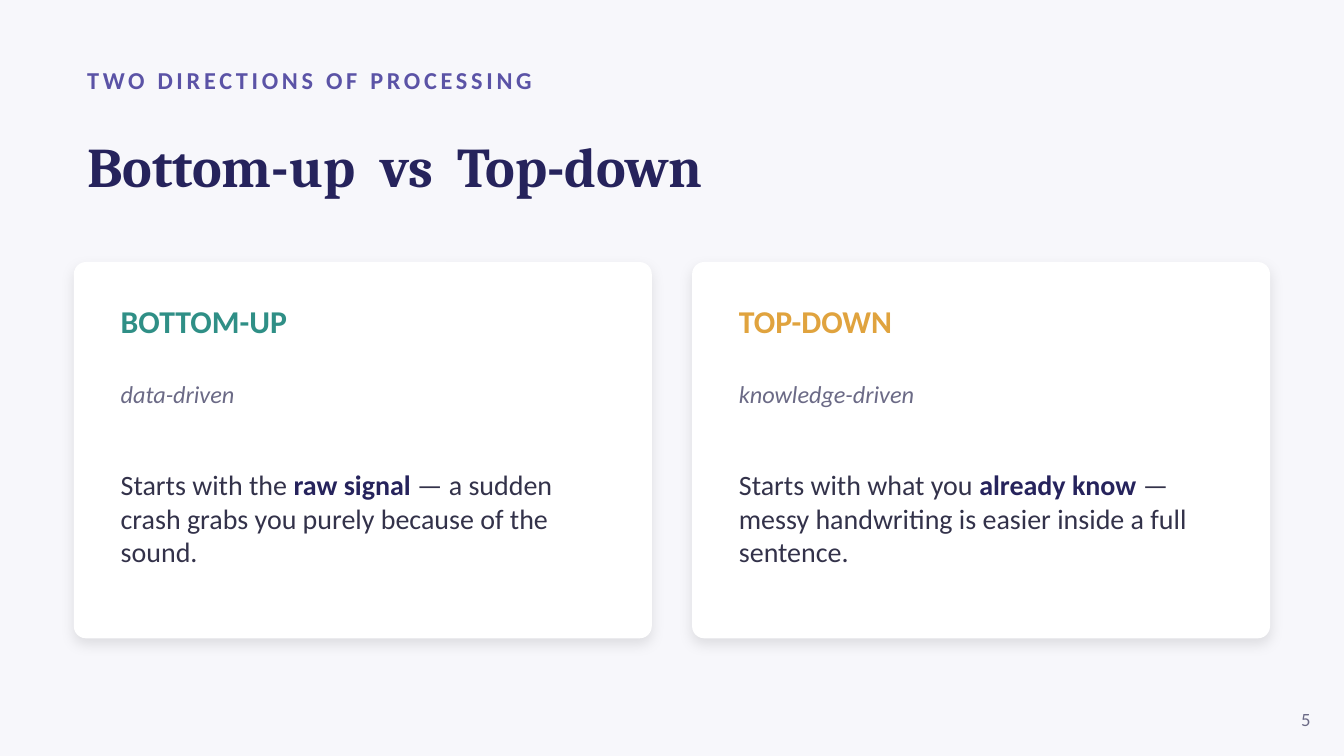
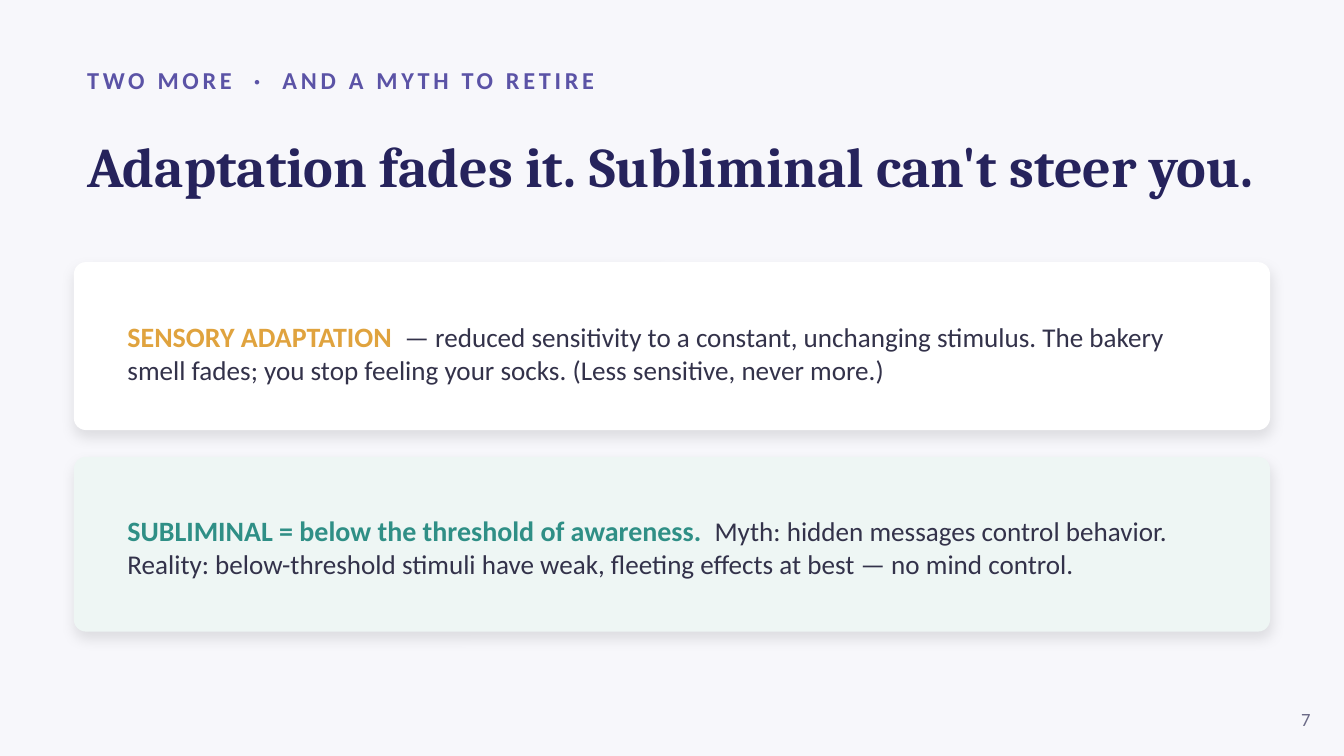
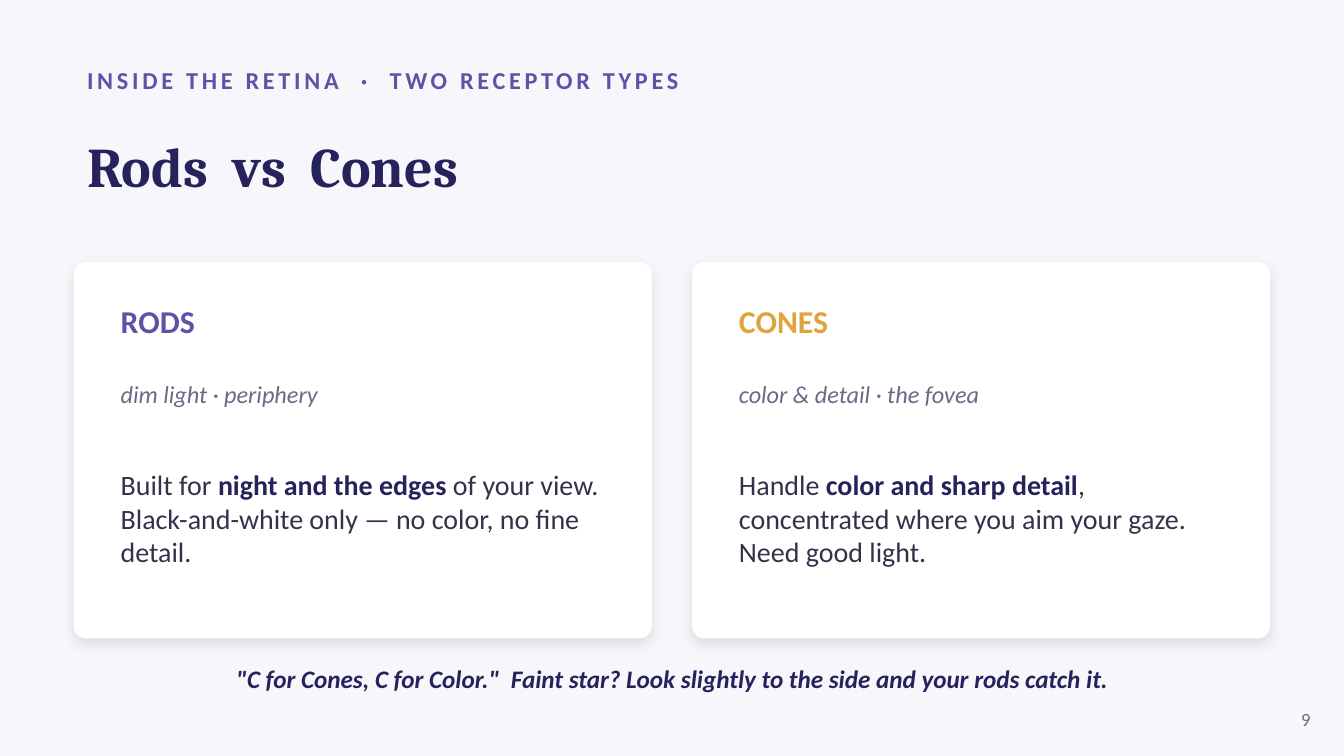
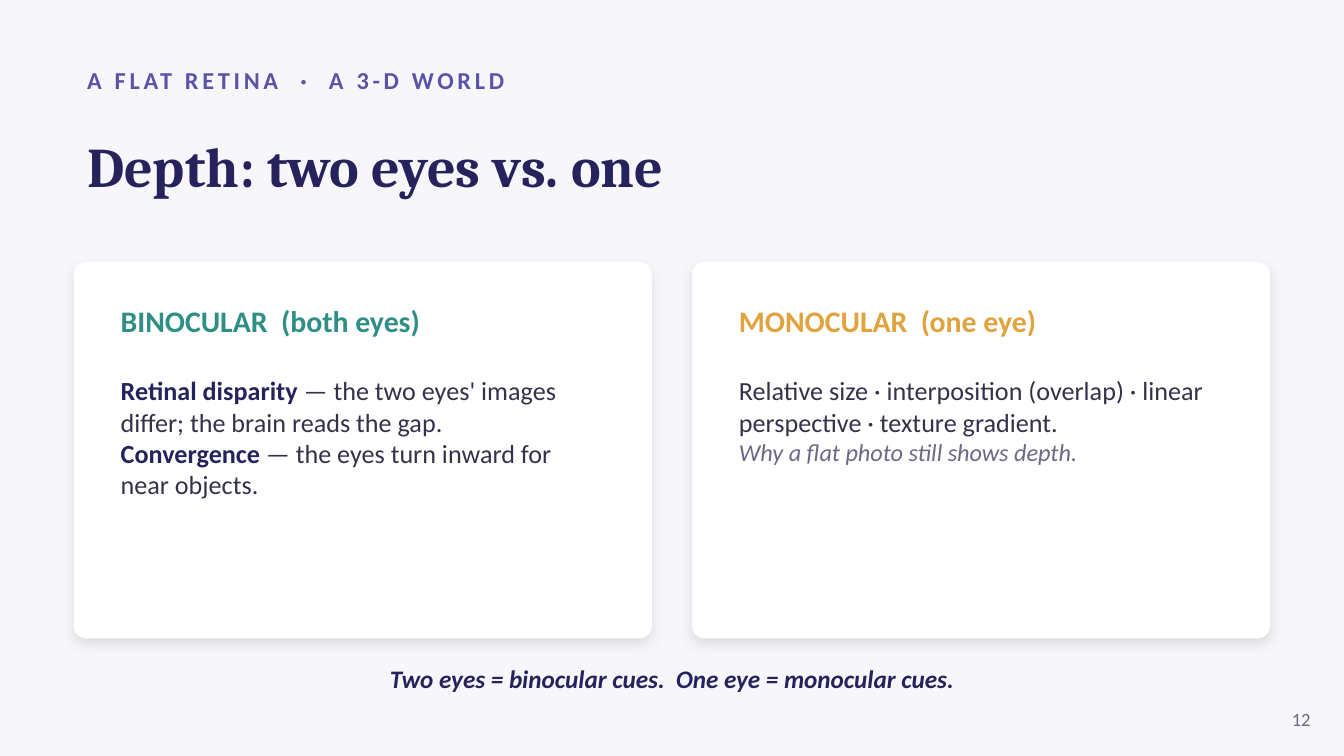
import lxml.etree
import pptx
import pptx.dml.color
import pptx.enum.shapes
import pptx.enum.text
import pptx.oxml.ns
import pptx.util

Inches = pptx.util.Inches
Pt = pptx.util.Pt
ALIGN = pptx.enum.text.PP_ALIGN
ANCHOR = pptx.enum.text.MSO_ANCHOR

BACKGROUND = "F7F7FB"
WHITE = "FFFFFF"
MINT = "EEF6F4"
NAVY = "26235C"
VIOLET = "5B53A6"
TEAL = "2F8F86"
AMBER = "E0A33E"
INK = "33324A"
MUTED = "6B6A86"

BODY_FONT = "Calibri"
TITLE_FONT = "Cambria"

MARGIN = 0.55
CONTENT_WIDTH = 8.9
CARD_TOP = 1.95
CARD_WIDTH = 4.3
CARD_HEIGHT = 2.8
CARD_GAP = 0.3
CARD_PADDING = 0.25
CORNER_RADIUS = 0.09
LINE_HEIGHT = 1.22


def rgb(hex_color):
    return pptx.dml.color.RGBColor.from_string(hex_color)


def add_text(slide, box, paragraphs, anchor=ANCHOR.MIDDLE, align=ALIGN.LEFT,
             font=BODY_FONT, tracking=None):
    frame = slide.shapes.add_textbox(*map(Inches, box)).text_frame
    frame.word_wrap = True
    frame.vertical_anchor = anchor
    for index, (runs, space_after) in enumerate(paragraphs):
        paragraph = frame.add_paragraph() if index else frame.paragraphs[0]
        paragraph.alignment = align
        paragraph.space_after = Pt(space_after)
        for words, size, color, style in runs:
            run = paragraph.add_run()
            run.text = words
            run.font.name = font
            run.font.size = Pt(size)
            run.font.color.rgb = rgb(color)
            run.font.bold = "b" in style
            run.font.italic = "i" in style
            if tracking:
                run.font._element.set("spc", str(tracking * 100))


def add_line(slide, box, words, size, color, style="", **layout):
    add_text(slide, box, [([(words, size, color, style)], 0)], **layout)


def add_shadow(card):
    card.shadow.inherit = False
    qn = pptx.oxml.ns.qn
    effects = card._element.spPr.find(qn("a:effectLst"))
    shadow = lxml.etree.SubElement(
        effects, qn("a:outerShdw"), blurRad=str(Pt(7)), dist=str(Pt(3)),
        dir=str(90 * 60000), algn="bl", rotWithShape="0")
    black = lxml.etree.SubElement(shadow, qn("a:srgbClr"), val="000000")
    lxml.etree.SubElement(black, qn("a:alpha"), val="10000")


def add_card(slide, left, top, width, height, fill=WHITE):
    card = slide.shapes.add_shape(
        pptx.enum.shapes.MSO_SHAPE.ROUNDED_RECTANGLE,
        *map(Inches, (left, top, width, height)))
    card.adjustments[0] = CORNER_RADIUS / min(width, height)
    card.fill.solid()
    card.fill.fore_color.rgb = rgb(fill)
    card.line.fill.background()
    add_shadow(card)


def add_slide(deck, kicker, title, number):
    slide = deck.slides.add_slide(deck.slide_layouts[6])
    slide.background.fill.solid()
    slide.background.fill.fore_color.rgb = rgb(BACKGROUND)
    add_line(slide, (MARGIN, 0.42, 9, 0.35), kicker, 13, VIOLET, "b", tracking=2)
    add_line(slide, (MARGIN, 0.78, CONTENT_WIDTH, 0.9), title, 30, NAVY, "b",
             font=TITLE_FONT)
    add_line(slide, (9.35, 5.2, 0.5, 0.3), str(number), 10, MUTED,
             align=ALIGN.RIGHT)
    return slide


def add_card_pair(slide, contents):
    for column, paragraphs in enumerate(contents):
        left = MARGIN + column * (CARD_WIDTH + CARD_GAP)
        add_card(slide, left, CARD_TOP, CARD_WIDTH, CARD_HEIGHT)
        add_text(slide, (left + CARD_PADDING, CARD_TOP + CARD_PADDING, 3.8, 2.4),
                 paragraphs, anchor=ANCHOR.TOP)


def add_takeaway(slide, words):
    add_line(slide, (MARGIN, 4.85, CONTENT_WIDTH, 0.4), words, 13.5, NAVY, "bi",
             align=ALIGN.CENTER)


def spaced(words, size, color, style, lines_after):
    return [(words, size, color, style)], size * LINE_HEIGHT * lines_after


def emphasis(before, key, after, size):
    runs = [(before, size, INK, ""), (key, size, NAVY, "b"), (after, size, INK, "")]
    return [run for run in runs if run[0]], 0


def contrast(heading, color, tagline, before, key, after):
    return [spaced(heading, 17, color, "b", 1),
            spaced(tagline, 13, MUTED, "i", 2),
            emphasis(before, key, after, 15)]


def add_definition(slide, card_box, text_top, text_height, fill, term, color, meaning):
    add_card(slide, *card_box, fill)
    add_text(slide, (0.85, text_top, 8.3, text_height),
             [([(term, 15, color, "b"), (meaning, 14.5, INK, "")], 0)])


def build_processing(deck):
    slide = add_slide(deck, "TWO DIRECTIONS OF PROCESSING",
                      "Bottom-up  vs  Top-down", 5)
    add_card_pair(slide, [
        contrast("BOTTOM-UP", TEAL, "data-driven", "Starts with the ", "raw signal",
                 " — a sudden crash grabs you purely because of the sound."),
        contrast("TOP-DOWN", AMBER, "knowledge-driven", "Starts with what you ",
                 "already know",
                 " — messy handwriting is easier inside a full sentence."),
    ])


def build_adaptation(deck):
    slide = add_slide(deck, "TWO MORE  ·  AND A MYTH TO RETIRE",
                      "Adaptation fades it. Subliminal can't steer you.", 7)
    add_definition(
        slide, (MARGIN, CARD_TOP, CONTENT_WIDTH, 1.25), 2.2, 0.85, WHITE,
        "SENSORY ADAPTATION  ", AMBER,
        "— reduced sensitivity to a constant, unchanging stimulus. The bakery "
        "smell fades; you stop feeling your socks. (Less sensitive, never more.)")
    add_definition(
        slide, (MARGIN, 3.4, CONTENT_WIDTH, 1.3), 3.62, 0.9, MINT,
        "SUBLIMINAL = below the threshold of awareness.  ", TEAL,
        "Myth: hidden messages control behavior. Reality: below-threshold "
        "stimuli have weak, fleeting effects at best — no mind control.")


def build_retina(deck):
    slide = add_slide(deck, "INSIDE THE RETINA  ·  TWO RECEPTOR TYPES",
                      "Rods  vs  Cones", 9)
    add_card_pair(slide, [
        contrast("RODS", VIOLET, "dim light · periphery", "Built for ",
                 "night and the edges",
                 " of your view. Black-and-white only — no color, no fine detail."),
        contrast("CONES", AMBER, "color & detail · the fovea", "Handle ",
                 "color and sharp detail",
                 ", concentrated where you aim your gaze. Need good light."),
    ])
    add_takeaway(slide, '"C for Cones, C for Color."  Faint star? Look slightly '
                        'to the side and your rods catch it.')


def build_depth(deck):
    slide = add_slide(deck, "A FLAT RETINA  ·  A 3-D WORLD",
                      "Depth: two eyes vs. one", 12)
    add_card_pair(slide, [
        [spaced("BINOCULAR  (both eyes)", 16, TEAL, "b", 1),
         emphasis("", "Retinal disparity",
                  " — the two eyes' images differ; the brain reads the gap.", 14),
         emphasis("", "Convergence",
                  " — the eyes turn inward for near objects.", 14)],
        [spaced("MONOCULAR  (one eye)", 16, AMBER, "b", 1),
         spaced("Relative size · interposition (overlap) · linear perspective · "
                "texture gradient.", 14, INK, "", 0),
         spaced("Why a flat photo still shows depth.", 13, MUTED, "i", 0)],
    ])
    add_takeaway(slide, "Two eyes = binocular cues.  One eye = monocular cues.")


def main():
    deck = pptx.Presentation()
    deck.slide_width = Inches(10)
    deck.slide_height = Inches(10 * 9 / 16)
    build_processing(deck)
    build_adaptation(deck)
    build_retina(deck)
    build_depth(deck)
    deck.save("out.pptx")


if __name__ == "__main__":
    main()
